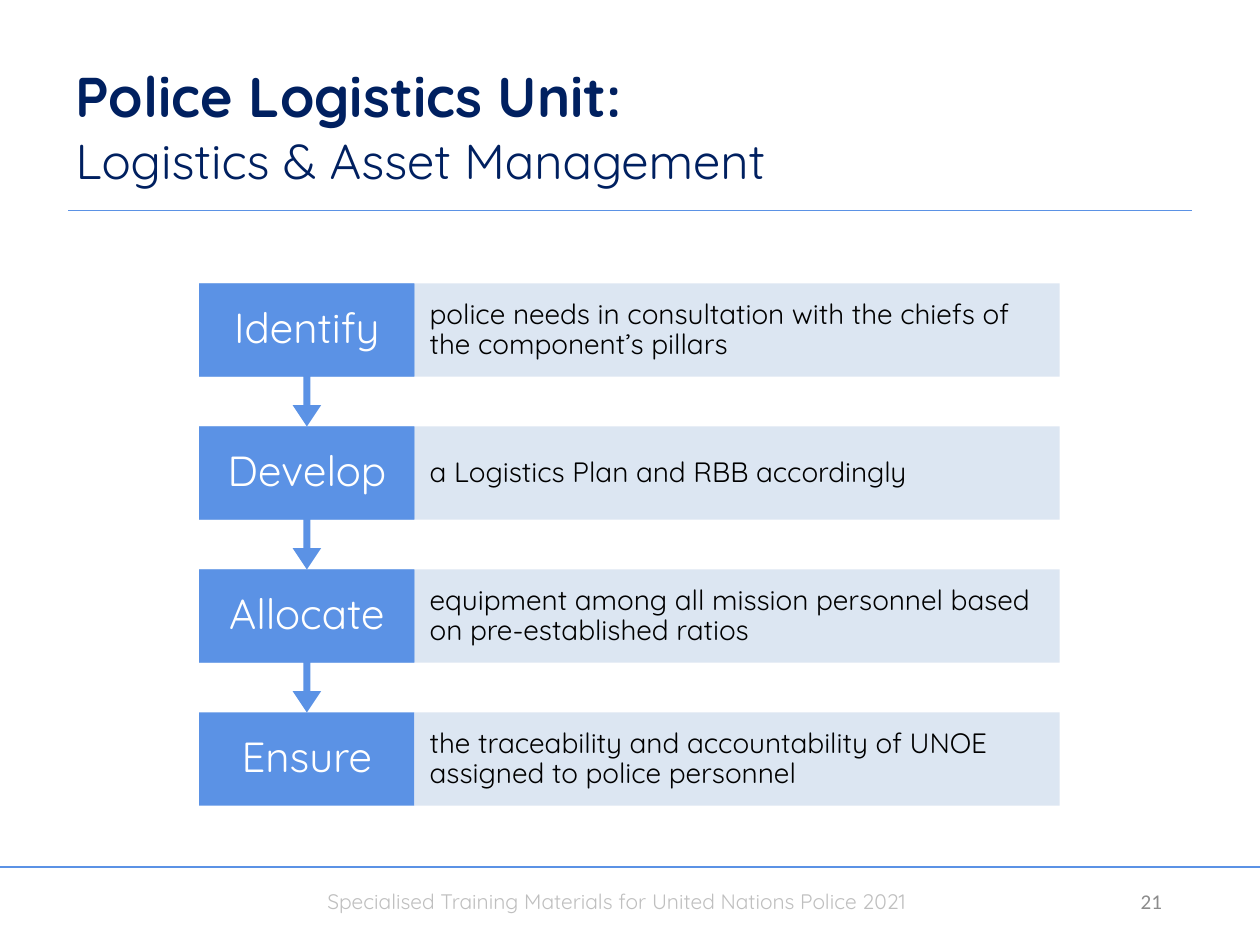
from dataclasses import dataclass

from lxml.etree import SubElement
from pptx import Presentation
from pptx.dml.color import RGBColor as RGB
from pptx.enum.shapes import MSO_CONNECTOR as Link, MSO_SHAPE as Kind
from pptx.enum.text import MSO_ANCHOR as Anchor, MSO_AUTO_SIZE as Fit, PP_ALIGN as Align
from pptx.oxml.ns import qn
from pptx.util import Inches, Pt


@dataclass(frozen=True)
class Theme:
    blue: str = "5B92E5"
    pale: str = "DCE6F2"
    navy: str = "002060"
    white: str = "FFFFFF"
    black: str = "000000"
    silver: str = "BFBFBF"
    gray: str = "8C8C8C"
    font: str = "Quicksand"
    plain: str = "Calibri"
    head: int = 32
    sub: int = 28
    verb: int = 24
    body: int = 16
    small: int = 12


STEPS = [
    ("Identify", "police needs in consultation with the chiefs of the component’s pillars"),
    ("Develop", "a Logistics Plan and RBB accordingly"),
    ("Allocate", "equipment among all mission personnel based on pre-established ratios"),
    ("Ensure", "the traceability and accountability of UNOE assigned to police personnel"),
]
LEFT, TOP, PITCH = 1.58, 2.25, 1.135
VERB_W, TEXT_W, ROW_H = 1.71, 5.12, 0.74


def write(para, text, *, size, color, font, bold=False, align=Align.LEFT, lead=None, after=None):
    """Add one run to a paragraph and set the format of both."""
    para.alignment = align
    if lead is not None:
        para.line_spacing = lead
    if after is not None:
        para.space_after = after
    run = para.add_run()
    run.text = text
    run.font.name = font
    run.font.size = Pt(size)
    run.font.bold = bold
    run.font.color.rgb = RGB.from_string(color)


class Deck:
    def __init__(self, theme):
        self.theme = theme
        self.file = Presentation()
        self.file.slide_width, self.file.slide_height = Inches(10), Inches(7.5)
        self.slide = self.file.slides.add_slide(self.file.slide_layouts[5])

    def title(self, box, head, sub):
        look = self.theme
        shape = self.slide.shapes.title
        shape.left, shape.top, shape.width, shape.height = map(Inches, box)
        frame = shape.text_frame
        frame.auto_size = Fit.NONE
        frame.vertical_anchor = Anchor.BOTTOM
        para = frame.paragraphs[0]
        form = dict(color=look.navy, font=look.font, lead=Pt(34.4))
        write(para, head, size=look.head, bold=True, **form)
        para.add_line_break()
        write(para, sub, size=look.sub, **form)

    def rule(self, left, right, top):
        line = self.slide.shapes.add_connector(
            Link.STRAIGHT, Inches(left), Inches(top), Inches(right), Inches(top))
        line.line.color.rgb = RGB.from_string(self.theme.blue)
        line.line.width = Pt(0.75)
        SubElement(line._element.spPr, qn("a:effectLst"))

    def label(self, box, text, anchor=Anchor.TOP, **form):
        frame = self.slide.shapes.add_textbox(*map(Inches, box)).text_frame
        frame.word_wrap = True
        frame.vertical_anchor = anchor
        write(frame.paragraphs[0], text, size=self.theme.small, **form)

    def shape(self, kind, box, fill):
        item = self.slide.shapes.add_shape(kind, *map(Inches, box))
        item.shadow.inherit = False
        item.fill.solid()
        item.fill.fore_color.rgb = RGB.from_string(fill)
        item.line.fill.background()
        return item

    def panel(self, box, text, fill, side, edge, **form):
        frame = self.shape(Kind.RECTANGLE, box, fill).text_frame
        frame.word_wrap = True
        frame.vertical_anchor = Anchor.MIDDLE
        frame.margin_left = frame.margin_right = Inches(side)
        frame.margin_top = frame.margin_bottom = Inches(edge)
        write(frame.paragraphs[0], text, font=self.theme.font, lead=0.9, **form)

    def arrow(self, box):
        item = self.shape(Kind.UP_ARROW_CALLOUT, box, self.theme.blue)
        item.rotation = 180
        for i, value in enumerate((0.05, 0.1, 0.15, 0.65)):
            item.adjustments[i] = value

    def step(self, top, verb, text, last):
        look = self.theme
        if not last:
            self.arrow((LEFT, top, VERB_W, PITCH))
        self.panel((LEFT, top, VERB_W, ROW_H), verb, look.blue, 0.14, 0.22,
                   size=look.verb, color=look.white, align=Align.CENTER)
        self.panel((LEFT + VERB_W, top, TEXT_W, ROW_H), text, look.pale, 0.12, 0.25,
                   size=look.body, color=look.black)


def main():
    look = Theme()
    deck = Deck(look)
    deck.rule(0, 10, 6.88)
    deck.label((2.5, 7, 5, 0.3), "Specialised Training Materials for United Nations Police 2021",
               color=look.silver, font=look.font)
    deck.rule(0.54, 9.46, 1.67)
    deck.label((8.6, 6.95, 0.72, 0.4), "21", Anchor.MIDDLE,
               color=look.gray, font=look.plain, align=Align.RIGHT)
    deck.title((0.5, 0.5, 7.83, 1.05), "Police Logistics Unit:", "Logistics & Asset Management")
    final = len(STEPS) - 1
    for i, (verb, text) in reversed(list(enumerate(STEPS))):
        deck.step(TOP + i * PITCH, verb, text, i == final)
    deck.file.save("out.pptx")


if __name__ == "__main__":
    main()
